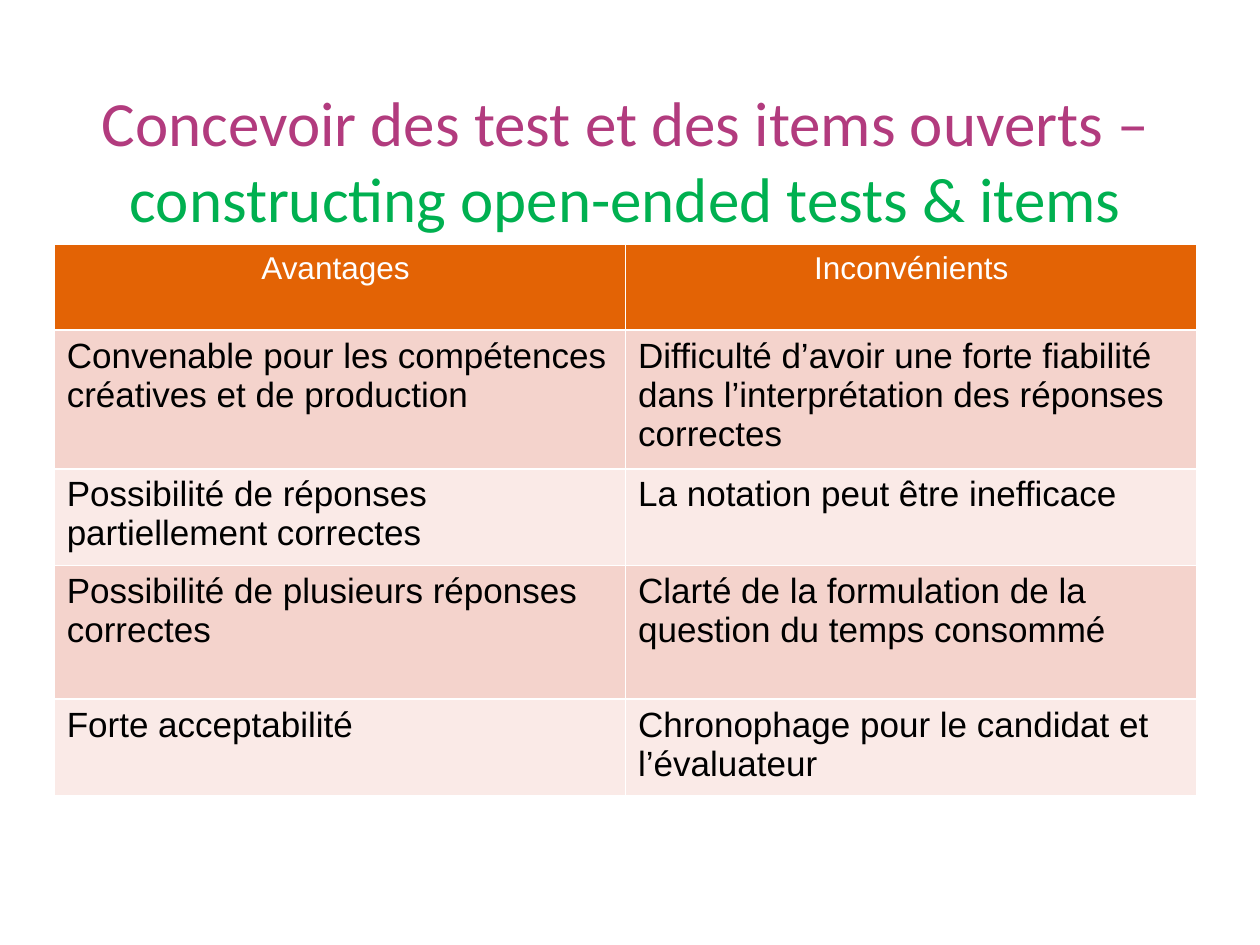
from dataclasses import dataclass

from pptx import Presentation
from pptx.dml.color import RGBColor
from pptx.enum.text import MSO_ANCHOR, PP_ALIGN
from pptx.util import Inches, Pt

CENTER = PP_ALIGN.CENTER
LEFT = PP_ALIGN.LEFT
MIDDLE = MSO_ANCHOR.MIDDLE
BLANK_LAYOUT = 6


@dataclass(frozen=True)
class Theme:
    title_font: str = "Calibri"
    table_font: str = "Arial"
    title_size: Pt = Pt(36)
    header_size: Pt = Pt(18)
    body_size: Pt = Pt(20)
    french: RGBColor = RGBColor(0xB2, 0x3B, 0x7E)
    english: RGBColor = RGBColor(0x00, 0xB0, 0x50)
    header_fill: RGBColor = RGBColor(0xE3, 0x63, 0x05)
    header_text: RGBColor = RGBColor(0xFF, 0xFF, 0xFF)
    body_text: RGBColor = RGBColor(0x00, 0x00, 0x00)
    bands: tuple = (RGBColor(0xF4, 0xD3, 0xCC), RGBColor(0xFA, 0xEA, 0xE7))


THEME = Theme()
MARGIN = Inches(0.43)
CONTENT_WIDTH = Inches(9.07)

TITLE = (
    ("Concevoir des test et des items ouverts – ", THEME.french),
    ("constructing open-ended tests & items", THEME.english),
)
HEADINGS = ("Avantages ", "Inconvénients")
COMPARISONS = (
    ("Convenable pour les compétences créatives et de production",
     "Difficulté d’avoir une forte fiabilité dans l’interprétation des réponses correctes"),
    ("Possibilité de réponses partiellement correctes",
     "La notation peut être inefficace"),
    ("Possibilité de plusieurs réponses correctes",
     "Clarté de la formulation de la question du temps consommé"),
    ("Forte acceptabilité",
     "Chronophage pour le candidat et l’évaluateur"),
)
ROW_HEIGHTS = (0.68, 1.03, 0.72, 1.06, 0.75)


def add_title(slide):
    title = slide.shapes.add_textbox(MARGIN, Inches(0.67), CONTENT_WIDTH, Inches(1.19))
    frame = title.text_frame
    frame.word_wrap = True
    frame.vertical_anchor = MIDDLE
    paragraph = frame.paragraphs[0]
    paragraph.alignment = CENTER
    paragraph.font.name = THEME.title_font
    paragraph.font.size = THEME.title_size
    for wording, color in TITLE:
        run = paragraph.add_run()
        run.text = wording
        run.font.color.rgb = color


def fill_cell(cell, wording, fill, color, size, alignment):
    cell.fill.solid()
    cell.fill.fore_color.rgb = fill
    cell.text = wording
    paragraph = cell.text_frame.paragraphs[0]
    paragraph.alignment = alignment
    font = paragraph.font
    font.name = THEME.table_font
    font.size = size
    font.bold = False
    font.color.rgb = color


def add_comparison_table(slide):
    table = slide.shapes.add_table(
        len(ROW_HEIGHTS), len(HEADINGS), MARGIN, Inches(1.94),
        CONTENT_WIDTH, Inches(sum(ROW_HEIGHTS)),
    ).table
    for row, height in zip(table.rows, ROW_HEIGHTS):
        row.height = Inches(height)
    for cell, heading in zip(table.rows[0].cells, HEADINGS):
        fill_cell(cell, heading, THEME.header_fill, THEME.header_text,
                  THEME.header_size, CENTER)
    for index, comparison in enumerate(COMPARISONS):
        band = THEME.bands[index % len(THEME.bands)]
        for cell, wording in zip(table.rows[index + 1].cells, comparison):
            fill_cell(cell, wording, band, THEME.body_text, THEME.body_size, LEFT)


def main():
    presentation = Presentation()
    presentation.slide_width = Inches(10)
    presentation.slide_height = Inches(7.5)
    slide = presentation.slides.add_slide(presentation.slide_layouts[BLANK_LAYOUT])
    add_title(slide)
    add_comparison_table(slide)
    presentation.save("out.pptx")


if __name__ == "__main__":
    main()
